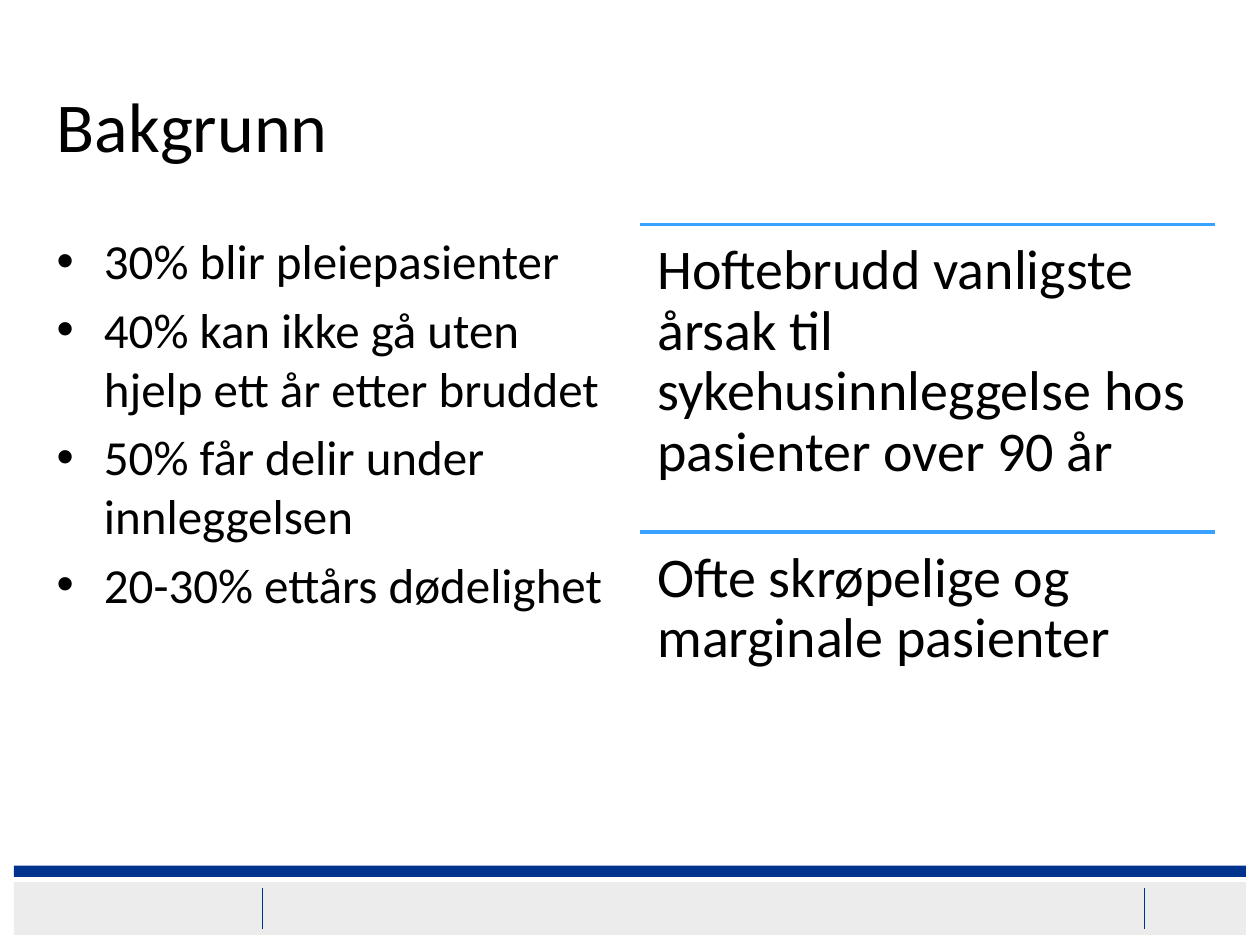
from pptx import Presentation
from pptx.dml.color import RGBColor
from pptx.enum import shapes, text
from pptx.oxml import ns, xmlchemy as xc
from pptx.util import Pt

HUES = {"ink": "000000", "navy": "00338D", "grey": "ECECEC", "sky": "39A1FF"}

TITLE = "Bakgrunn"
ITEMS = [
    "30% blir pleiepasienter",
    "40% kan ikke gå uten hjelp ett år etter bruddet",
    "50% får delir under innleggelsen",
    "20-30% ettårs dødelighet",
]
FACTS = [
    "Hoftebrudd vanligste årsak til sykehusinnleggelse hos pasienter over 90 år",
    "Ofte skrøpelige og marginale pasienter",
]


def hue(name):
    return RGBColor.from_string(HUES[name])


def style(obj, form):
    for key, val in form.items():
        setattr(obj, key, val)


def place(shape, left, top, width, height):
    style(shape, {"left": Pt(left), "top": Pt(top),
                  "width": Pt(width), "height": Pt(height)})


def write(para, words, size, **form):
    para.text = words
    style(para, {"alignment": text.PP_ALIGN.LEFT, **form})
    style(para.font, {"name": "Calibri", "size": Pt(size)})
    para.font.color.rgb = hue("ink")


def add_bar(slide, top, height, name):
    bar = slide.shapes.add_shape(shapes.MSO_SHAPE.RECTANGLE,
                                 Pt(8), Pt(top), Pt(704), Pt(height))
    bar.shadow.inherit = False
    bar.fill.solid()
    bar.fill.fore_color.rgb = hue(name)
    bar.line.fill.background()


def add_line(slide, start, end, name, width):
    line = slide.shapes.add_connector(
        shapes.MSO_CONNECTOR.STRAIGHT, *map(Pt, start + end))
    line.line.color.rgb = hue(name)
    line.line.width = Pt(width)
    props = line._element.spPr
    props.append(xc.OxmlElement("a:effectLst"))


def add_title(slide):
    title = slide.shapes.title
    place(title, 25.2, 26, 669, 90)
    style(title.text_frame, {"vertical_anchor": text.MSO_ANCHOR.MIDDLE,
                             "auto_size": text.MSO_AUTO_SIZE.NONE})
    write(title.text_frame.paragraphs[0], TITLE, 40)


def add_list(slide):
    body = slide.placeholders[1]
    place(body, 25.2, 128.2, 328.5, 352)
    frame = body.text_frame
    frame.auto_size = text.MSO_AUTO_SIZE.NONE
    for i, item in enumerate(ITEMS):
        para = frame.paragraphs[0] if i == 0 else frame.add_paragraph()
        props = para._p.get_or_add_pPr()
        props.set("marL", str(Pt(27)))
        props.set("indent", str(-Pt(27)))
        mark = xc.OxmlElement("a:buChar")
        mark.set("char", "•")
        props.insert_element_before(mark, "a:tabLst", "a:defRPr", "a:extLst")
        write(para, item, 28, space_before=Pt(5.6 if i else 0))


def add_fact(slide, words, top):
    left, width, height = 366, 328.5, 175.8
    add_line(slide, (left, top), (left + width, top), "sky", 2)
    box = slide.shapes.add_textbox(Pt(left), Pt(top), Pt(width), Pt(height))
    frame = box.text_frame
    style(frame, {"word_wrap": True, **{
        "margin_" + side: Pt(9.6)
        for side in ("left", "top", "right", "bottom")}})
    write(frame.paragraphs[0], words, 32, line_spacing=0.9)
    return top + height


def main():
    deck = Presentation()
    style(deck, {"slide_width": Pt(720), "slide_height": Pt(540)})
    slide = deck.slides.add_slide(deck.slide_layouts[1])

    # Footer band with its two dividers
    add_bar(slide, 504, 30.2, "grey")
    add_bar(slide, 494.6, 6.5, "navy")
    for x in (150, 654):
        add_line(slide, (x, 507.6), (x, 530.6), "navy", 0.25)

    # Heading and bullet list
    add_title(slide)
    add_list(slide)

    # Ruled facts on the right
    top = 128.2
    for fact in FACTS:
        top = add_fact(slide, fact, top)

    deck.save("out.pptx")


if __name__ == "__main__":
    main()
